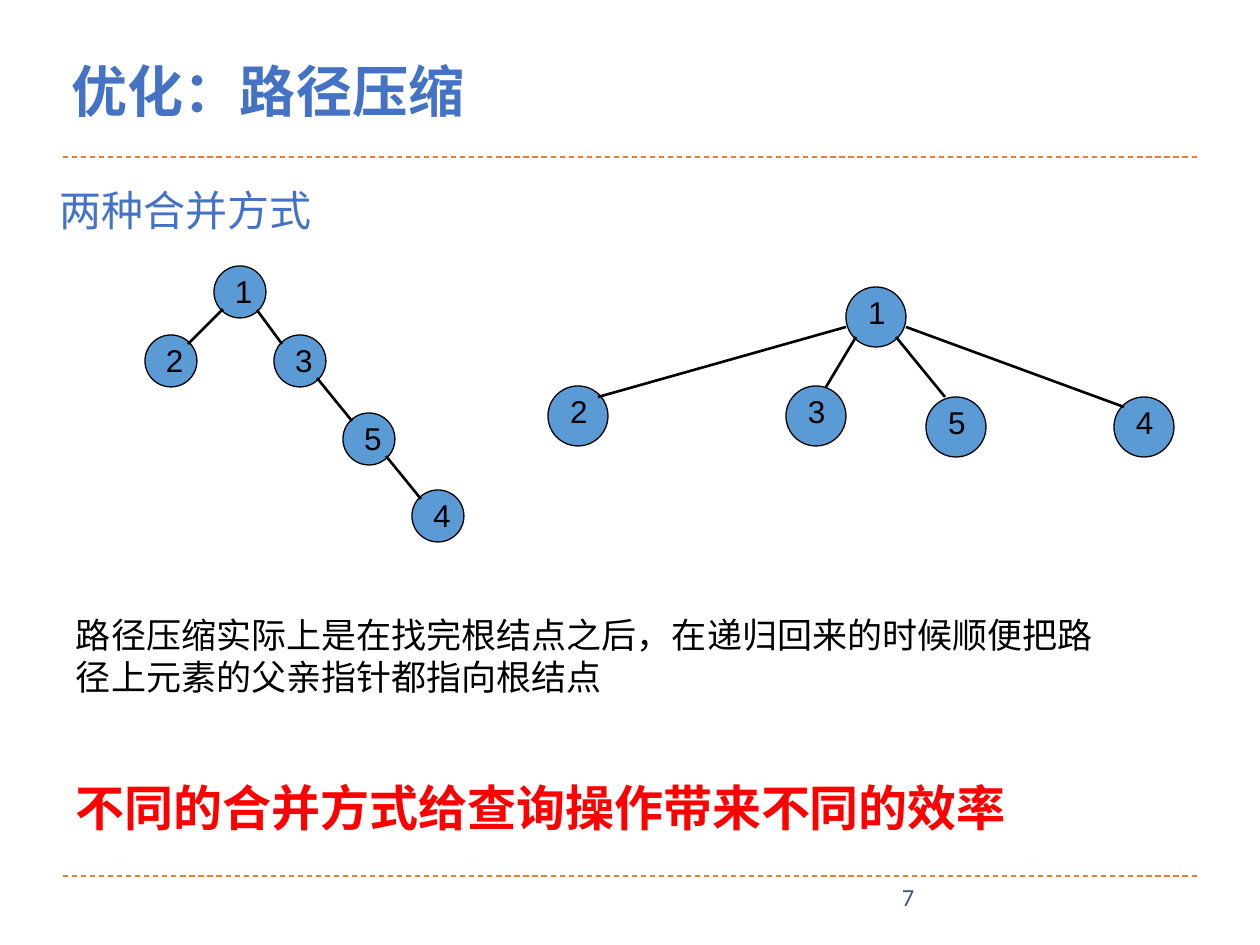
import pptx
import pptx.util
import pptx.dml.color
import pptx.enum.dml
import pptx.enum.shapes
import pptx.enum.text
import pptx.oxml.ns
import lxml.etree

PX = 914400 / 126
THEME = {
    "heading": "4472C4", "alert": "FF0000", "ink": "000000", "node": "5B9BD5",
    "rule": "ED7D31", "number": "44546A",
    "title_pt": 32, "alert_pt": 28, "subtitle_pt": 24, "body_pt": 20, "node_pt": 18, "number_pt": 14,
    "cjk": "Noto Sans CJK SC",
}


def write(box, text, size, color, font="Calibri", bold=False, margin_left=12, wrap=True,
          anchor=pptx.enum.text.MSO_ANCHOR.TOP, line_spacing=None):
    frame = box.text_frame
    frame.word_wrap = wrap
    frame.auto_size = pptx.enum.text.MSO_AUTO_SIZE.NONE
    frame.vertical_anchor = anchor
    frame.margin_left = round(margin_left * PX)
    paragraph = frame.paragraphs[0]
    paragraph.alignment = pptx.enum.text.PP_ALIGN.LEFT
    if line_spacing:
        paragraph.line_spacing = line_spacing
    run = paragraph.add_run()
    run.text = text
    run.font.size = pptx.util.Pt(THEME[size])
    run.font.bold = bold
    run.font.color.rgb = pptx.dml.color.RGBColor.from_string(THEME[color])
    run.font.name = font
    east_asian = lxml.etree.SubElement(run.font._element, pptx.oxml.ns.qn("a:ea"))
    east_asian.set("typeface", THEME["cjk"])


def draw_line(shapes, points, color, width):
    line = shapes.add_connector(pptx.enum.shapes.MSO_CONNECTOR.STRAIGHT, *[round(v * PX) for v in points])
    line.line.color.rgb = pptx.dml.color.RGBColor.from_string(THEME[color])
    line.line.width = pptx.util.Pt(width)
    lxml.etree.SubElement(line._element.spPr, pptx.oxml.ns.qn("a:effectLst"))
    return line


deck = pptx.Presentation()
deck.slide_width = round(1260 * PX)
deck.slide_height = round(945 * PX)
slide = deck.slides.add_slide(deck.slide_layouts[5])

for rule_y in (876, 157):
    rule = draw_line(slide.shapes, (63, rule_y, 1197, rule_y), "rule", 0.75)
    rule.line.dash_style = pptx.enum.dml.MSO_LINE.DASH

title = slide.shapes.title
title.left, title.top, title.width, title.height = [round(v * PX) for v in (47, 50, 843, 81)]
write(title, "优化：路径压缩", "title_pt", "heading", font="Times New Roman", bold=True,
      margin_left=25, anchor=pptx.enum.text.MSO_ANCHOR.MIDDLE)

trees = [
    {
        "diameter": 60, "label_offset": 10,
        "nodes": {"1": (846, 287), "2": (548, 386), "3": (786, 386), "4": (1114, 397), "5": (926, 397)},
        "edges": [(846, 327, 598, 397), (856, 337, 826, 387), (896, 337, 945, 397), (906, 327, 1124, 407)],
    },
    {
        "diameter": 52, "label_offset": 9,
        "nodes": {"1": (214, 266), "2": (145, 335), "3": (274, 335), "4": (412, 490), "5": (343, 413)},
        "edges": [(223, 309, 188, 344), (257, 310, 282, 344), (386, 456, 421, 499), (317, 378, 352, 421)],
    },
]
for tree in trees:
    group = slide.shapes.add_group_shape()
    diameter = round(tree["diameter"] * PX)
    for number, (x, y) in tree["nodes"].items():
        node = group.shapes.add_shape(pptx.enum.shapes.MSO_SHAPE.OVAL, round(x * PX), round(y * PX),
                                      diameter, diameter)
        node.shadow.inherit = False
        node.fill.solid()
        node.fill.fore_color.rgb = pptx.dml.color.RGBColor.from_string(THEME["node"])
        node.line.color.rgb = pptx.dml.color.RGBColor.from_string(THEME["ink"])
        node.line.width = pptx.util.Pt(0.75)
        label = group.shapes.add_textbox(round((x + tree["label_offset"]) * PX), round(y * PX),
                                         round(43 * PX), round(50 * PX))
        write(label, number, "node_pt", "ink", font="Arial", wrap=False)
    for edge in tree["edges"]:
        draw_line(group.shapes, edge, "ink", 1.5)

passages = [
    ((890, 876, 284, 50), "7", {"size": "number_pt", "color": "number"}),
    ((48, 178, 466, 63), "两种合并方式", {"size": "subtitle_pt", "color": "heading"}),
    ((64, 771, 978, 72), "不同的合并方式给查询操作带来不同的效率",
     {"size": "alert_pt", "color": "alert", "bold": True}),
    ((64, 607, 1051, 97), "路径压缩实际上是在找完根结点之后，在递归回来的时候顺便把路径上元素的父亲指针都指向根结点",
     {"size": "body_pt", "color": "ink", "font": THEME["cjk"]}),
]
for bounds, text, style in passages:
    passage = slide.shapes.add_textbox(*[round(v * PX) for v in bounds])
    write(passage, text, **style)

deck.save("out.pptx")
